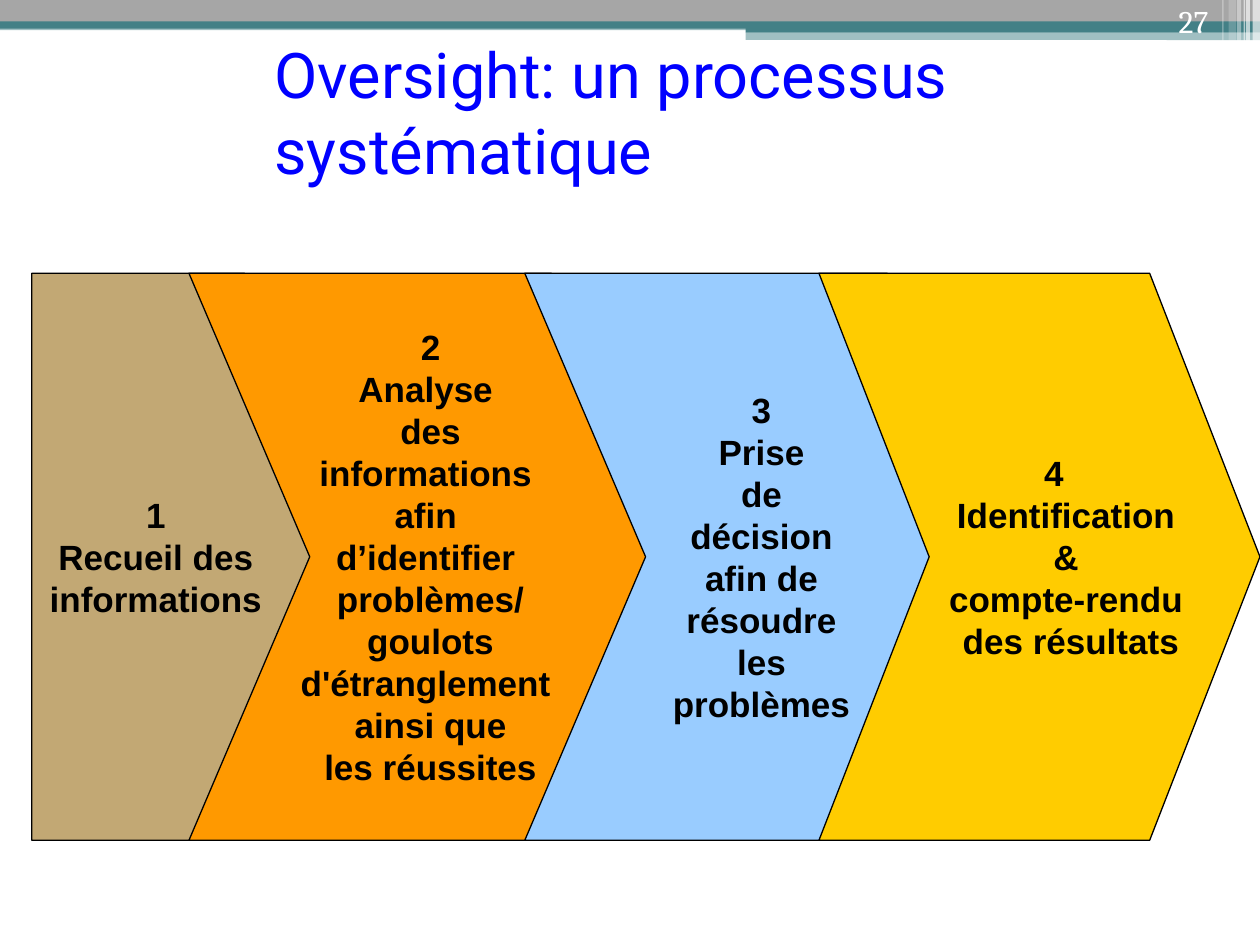
import pptx
import pptx.dml.color
import pptx.enum.shapes
import pptx.enum.text
import pptx.oxml
import pptx.oxml.ns
import pptx.util

Cm = pptx.util.Cm
Pt = pptx.util.Pt
RGBColor = pptx.dml.color.RGBColor
SHAPE = pptx.enum.shapes.MSO_SHAPE
ALIGN = pptx.enum.text.PP_ALIGN
ANCHOR = pptx.enum.text.MSO_ANCHOR

WHITE = RGBColor(0xFF, 0xFF, 0xFF)
BLACK = RGBColor(0, 0, 0)
BLUE = RGBColor(0, 0, 0xFF)
GREY = RGBColor(0xA6, 0xA6, 0xA6)
TEAL = RGBColor(0x43, 0x80, 0x86)
TAN = RGBColor(0xC2, 0xA8, 0x74)
ORANGE = RGBColor(0xFF, 0x99, 0x00)
SKY = RGBColor(0x99, 0xCC, 0xFF)
YELLOW = RGBColor(0xFF, 0xCC, 0x00)

BANDS = [
    (SHAPE.RECTANGLE, 0, 0.53, 25.4, 0.08, TEAL, 50),
    (SHAPE.RECTANGLE, 0, 0, 25.4, 0.48, GREY, 100),
    (SHAPE.RECTANGLE, 0, 0.43, 25.4, 0.15, TEAL, 100),
    (SHAPE.RECTANGLE, 15.03, 0.53, 10.37, 0.13, TEAL, 100),
    (SHAPE.RECTANGLE, 15.03, 0.66, 10.37, 0.15, TEAL, 50),
    (SHAPE.ROUNDED_RECTANGLE, 15.01, 0.81, 8.51, 0.05, WHITE, 100),
]
STRIPES = [
    (25.25, 0.15, 1.73, 65),
    (25.12, 0.08, 1.73, 65),
    (25.07, 0.03, 1.73, 60),
    (24.94, 0.08, 1.73, 40),
    (24.77, 0.15, 1.63, 20),
    (24.64, 0.03, 1.63, 30),
]
STEPS = [
    (SHAPE.PENTAGON, 0.64, 5.72, TAN, ["1\nRecueil des", "informations"]),
    (SHAPE.CHEVRON, 3.81, 9.74, ORANGE, [
        "2\nAnalyse ", "des", "informations ", "afin ", "d’identifier ",
        "problèmes/", "goulots", "d'étranglement ", "ainsi que", "les réussites"]),
    (SHAPE.CHEVRON, 10.58, 9.74, SKY, [
        "3 ", "Prise ", "de ", "décision ", "afin de ", "résoudre ", "les ",
        "problèmes "]),
    (SHAPE.CHEVRON, 16.51, 8.89, YELLOW, [
        "4", "\tIdentification ", "\t& ", "\tcompte-rendu ", "\tdes résultats"]),
]


def add_block(slide, kind, left, top, width, height, color, opacity=100):
    """Add a filled shape without outline or shadow."""
    block = slide.shapes.add_shape(kind, Cm(left), Cm(top), Cm(width), Cm(height))
    block.shadow.inherit = False
    block.fill.solid()
    block.fill.fore_color.rgb = color
    block.line.fill.background()
    if opacity < 100:
        tint = block.fill._xPr.find(".//" + pptx.oxml.ns.qn("a:srgbClr"))
        tint.append(pptx.oxml.parse_xml(
            f'<a:alpha {pptx.oxml.ns.nsdecls("a")} val="{opacity * 1000}"/>'))
    return block


def write_lines(frame, lines, font_name, size, color, align, bold=False):
    """Write one paragraph per entry, with line breaks at newlines."""
    for index, entry in enumerate(lines):
        paragraph = frame.paragraphs[0] if index == 0 else frame.add_paragraph()
        paragraph.alignment = align
        for part_index, part in enumerate(entry.split("\n")):
            if part_index:
                paragraph.add_line_break()
            run = paragraph.add_run()
            run.text = part
            run.font.name = font_name
            run.font.size = Pt(size)
            run.font.bold = bold
            run.font.color.rgb = color


def add_label(slide, left, top, width, height, text, font_name, size, color, align, anchor):
    """Add a wrapping text box."""
    label = slide.shapes.add_textbox(Cm(left), Cm(top), Cm(width), Cm(height))
    frame = label.text_frame
    frame.word_wrap = True
    frame.vertical_anchor = anchor
    write_lines(frame, [text], font_name, size, color, align)


def add_step(slide, kind, left, width, color, lines):
    """Add one arrow of the process with its centred text."""
    step = add_block(slide, kind, left, 5.51, width, 11.43, color)
    step.adjustments[0] = 0.25
    step.line.color.rgb = BLACK
    step.line.width = Pt(0.75)
    frame = step.text_frame
    frame.word_wrap = False
    frame.vertical_anchor = ANCHOR.MIDDLE
    write_lines(frame, lines, "Arial", 20, BLACK, ALIGN.CENTER, bold=True)
    return step


def main():
    """Build the process slide and save it."""
    deck = pptx.Presentation()
    deck.slide_width, deck.slide_height = Cm(25.4), Cm(19.05)
    slide = deck.slides.add_slide(deck.slide_layouts[6])
    for band in BANDS:
        add_block(slide, *band)
    for left, width, height, opacity in STRIPES:
        add_block(slide, SHAPE.RECTANGLE, left, 0, width, height, WHITE, opacity)
    add_label(slide, 5.28, 1.07, 18.21, 2.34, "Oversight: un processus systématique",
              "Roboto", 36, BLUE, ALIGN.LEFT, ANCHOR.MIDDLE)
    steps = [add_step(slide, *step) for step in STEPS]
    report_number = steps[-1].text_frame.paragraphs[0]
    report_number._p.get_or_add_pPr().set("marL", str(Cm(0.58)))
    add_label(slide, 22.5, -0.1, 2.11, 1.02, "27",
              "Cambria", 18, WHITE, ALIGN.RIGHT, ANCHOR.BOTTOM)
    deck.save("out.pptx")


if __name__ == "__main__":
    main()
